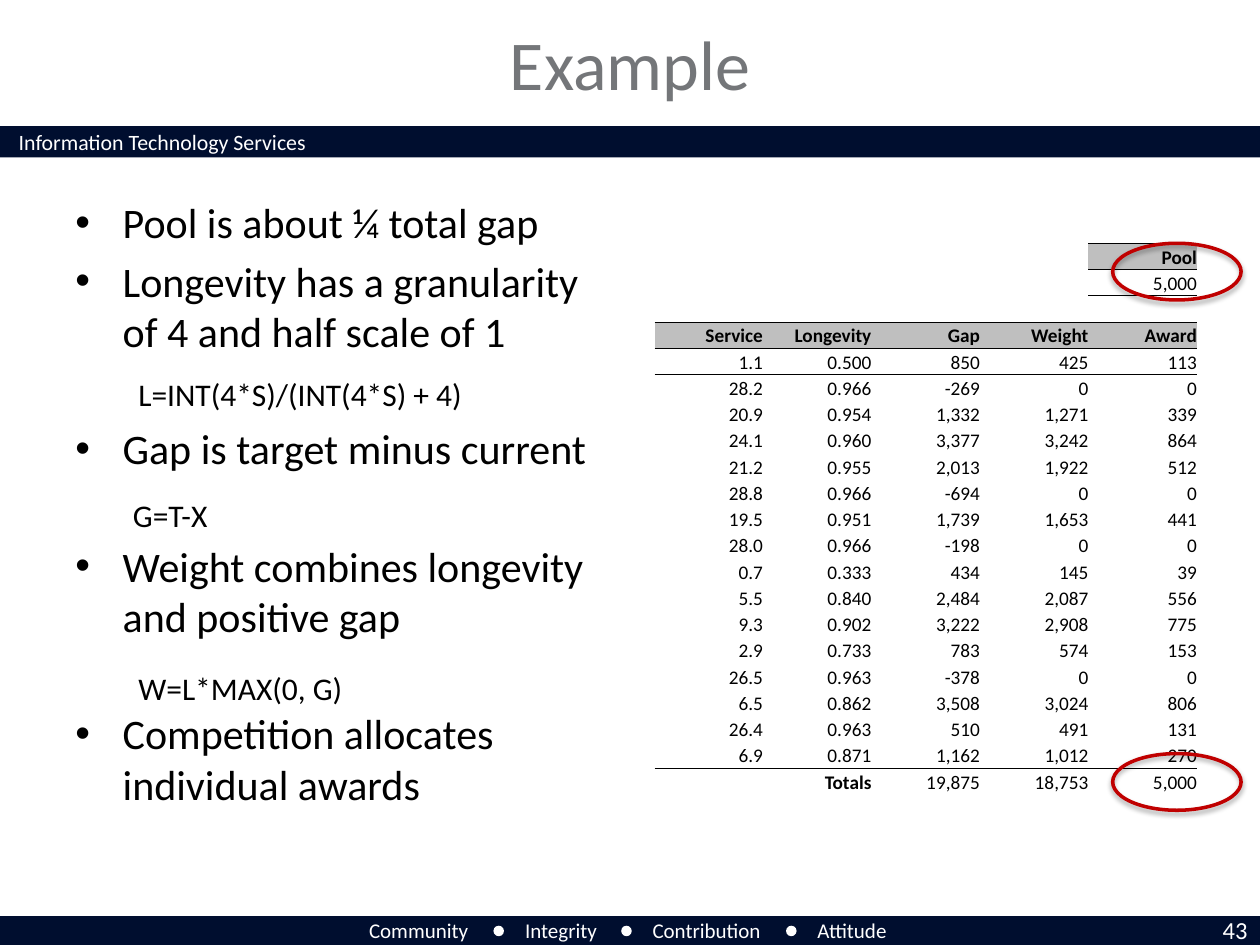
"""Build the pool award example slide with its bullets, formulas and award table."""
import pptx
import pptx.dml.color
import pptx.enum.shapes
import pptx.enum.text
import pptx.oxml.ns
import pptx.util
from lxml import etree

Pt = pptx.util.Pt
qn = pptx.oxml.ns.qn
ALIGN = pptx.enum.text.PP_ALIGN
ANCHOR = pptx.enum.text.MSO_ANCHOR
SHAPE = pptx.enum.shapes.MSO_SHAPE
FONT = "Calibri"
NAVY, WHITE, BLACK, GREY, RED = "000E2F", "FFFFFF", "000000", "BFBFBF", "C00000"


def color(value):
    return pptx.dml.color.RGBColor.from_string(value)


def add_text(box, lines, size, font_color, align=ALIGN.LEFT, wrap=True):
    left, top, width, height = box
    shape = slide.shapes.add_textbox(Pt(left), Pt(top), Pt(width), Pt(height))
    shape.text_frame.word_wrap = wrap
    shape.text_frame.text = lines
    for paragraph in shape.text_frame.paragraphs:
        paragraph.alignment = align
        for run in paragraph.runs:
            run.font.name = FONT
            run.font.size = Pt(size)
            run.font.color.rgb = color(font_color)
    return shape


presentation = pptx.Presentation()
presentation.slide_width, presentation.slide_height = Pt(720), Pt(540)
slide = presentation.slides.add_slide(presentation.slide_layouts[6])

decorations = [(SHAPE.RECTANGLE, 0, top, 720, 18, NAVY) for top in (72, 523.44)]
decorations += [(SHAPE.OVAL, left, 529, 6, 6, WHITE) for left in (282, 355, 449.2)]
for kind, left, top, width, height, fill in decorations:
    shape = slide.shapes.add_shape(kind, Pt(left), Pt(top), Pt(width), Pt(height))
    shape.shadow.inherit = False
    shape.fill.solid()
    shape.fill.fore_color.rgb = color(fill)
    shape.line.fill.background()

add_text((3.6, 70, 245, 23), "Information Technology Services", 12.5, WHITE)
for left, width, value in [
    (203.8, 72, "Community"),
    (293, 57.6, "Integrity"),
    (365.8, 79.2, "Contribution"),
    (460, 56.2, "Attitude"),
]:
    add_text((left, 520.6, width, 21.6), value, 12, WHITE, wrap=False)
add_text((665.3, 519.1, 54.7, 24.5), "43", 14, WHITE, ALIGN.RIGHT)

title = add_text((72, 7.2, 576, 57.6), "Example", 40, "747679", ALIGN.CENTER)
title.text_frame.vertical_anchor = ANCHOR.MIDDLE

bullets = [
    ("Pool is about ¼ total gap", 0),
    ("Longevity has a granularity of 4 and half scale of 1", 4.8),
    ("Gap is target minus current", 38.2),
    ("Weight combines longevity and positive gap", 38.2),
    ("Competition allocates individual awards", 38.2),
]
body = add_text((36, 108.7, 317.5, 396), "\n".join(text for text, gap in bullets), 24, BLACK)
for paragraph, (text, gap) in zip(body.text_frame.paragraphs, bullets):
    if gap:
        paragraph.space_before = Pt(gap)
    properties = paragraph._p.get_or_add_pPr()
    properties.set("marL", str(Pt(27)))
    properties.set("indent", str(-Pt(27)))
    etree.SubElement(properties, qn("a:buFont"), typeface="Arial")
    etree.SubElement(properties, qn("a:buChar"), char="•")

add_text((72, 211, 201.6, 28.8), "L=INT(4*S)/(INT(4*S) + 4)", 18, BLACK, wrap=False)
gap_formula = add_text((76, 283.7, 50, 21.6), "G=T-X", 18, BLACK, wrap=False)
frame = gap_formula.text_frame
frame.margin_left = frame.margin_right = frame.margin_top = frame.margin_bottom = 0
add_text((72, 378.7, 132.5, 28.8), "W=L*MAX(0, G)", 18, BLACK, wrap=False)

rows = [
    ["", "", "", "", "Pool"],
    ["", "", "", "", "5,000"],
    ["", "", "", "", ""],
    ["Service", "Longevity", "Gap", "Weight", "Award"],
    ["1.1", "0.500", "850", "425", "113"],
    ["28.2", "0.966", "-269", "0", "0"],
    ["20.9", "0.954", "1,332", "1,271", "339"],
    ["24.1", "0.960", "3,377", "3,242", "864"],
    ["21.2", "0.955", "2,013", "1,922", "512"],
    ["28.8", "0.966", "-694", "0", "0"],
    ["19.5", "0.951", "1,739", "1,653", "441"],
    ["28.0", "0.966", "-198", "0", "0"],
    ["0.7", "0.333", "434", "145", "39"],
    ["5.5", "0.840", "2,484", "2,087", "556"],
    ["9.3", "0.902", "3,222", "2,908", "775"],
    ["2.9", "0.733", "783", "574", "153"],
    ["26.5", "0.963", "-378", "0", "0"],
    ["6.5", "0.862", "3,508", "3,024", "806"],
    ["26.4", "0.963", "510", "491", "131"],
    ["6.9", "0.871", "1,162", "1,012", "270"],
    ["", "Totals", "19,875", "18,753", "5,000"],
]
pool_row, header_row, totals_row = 0, 3, len(rows) - 1
ruled_edges = {pool_row, pool_row + 1, header_row, header_row + 1, totals_row}
row_height, column_width = 15.02, 62
table = slide.shapes.add_table(
    len(rows), 5, Pt(374), Pt(139), Pt(5 * column_width), Pt(len(rows) * row_height)
).table
table.first_row = table.horz_banding = False
style = table._tbl.tblPr.find(qn("a:tableStyleId"))
style.text = "{2D5ABB26-0587-4C30-8999-92F81FD0307C}"
for column in table.columns:
    column.width = Pt(column_width)

for row_index, values in enumerate(rows):
    table.rows[row_index].height = Pt(row_height)
    for column_index, value in enumerate(values):
        cell = table.cell(row_index, column_index)
        cell.margin_left = cell.margin_right = cell.margin_top = cell.margin_bottom = 0
        cell.vertical_anchor = ANCHOR.BOTTOM
        in_table = row_index >= header_row - 1 or column_index == 4
        for tag, edge in (("a:lnT", row_index), ("a:lnB", row_index + 1)):
            if in_table and edge in ruled_edges:
                border = etree.SubElement(cell._tc.get_or_add_tcPr(), qn(tag), w=str(Pt(0.5)))
                fill = etree.SubElement(border, qn("a:solidFill"))
                etree.SubElement(fill, qn("a:srgbClr"), val=BLACK)
        is_header = bool(value) and row_index in (pool_row, header_row)
        if is_header:
            cell.fill.solid()
            cell.fill.fore_color.rgb = color(GREY)
        else:
            cell.fill.background()
        cell.text_frame.text = value
        paragraph = cell.text_frame.paragraphs[0]
        paragraph.alignment = ALIGN.RIGHT
        for run in paragraph.runs:
            run.font.name = FONT
            run.font.size = Pt(11)
            run.font.bold = is_header or value == "Totals"
            run.font.color.rgb = color(BLACK)
        if not value:
            etree.SubElement(paragraph._p, qn("a:endParaRPr"), sz="1100")

for top in (139, 430.6):
    ring = slide.shapes.add_shape(SHAPE.OVAL, Pt(635.8), Pt(top), Pt(73.4), Pt(32.4))
    ring.fill.background()
    ring.line.color.rgb = color(RED)
    ring.line.width = Pt(2)
    ring.shadow.inherit = False
    effects = ring._element.spPr.find(qn("a:effectLst"))
    shadow = etree.SubElement(
        effects, qn("a:outerShdw"), blurRad=str(Pt(3.1)), dist=str(Pt(1.8)),
        dir="5400000", rotWithShape="0",
    )
    shade = etree.SubElement(shadow, qn("a:srgbClr"), val=BLACK)
    etree.SubElement(shade, qn("a:alpha"), val="35000")

presentation.save("out.pptx")
